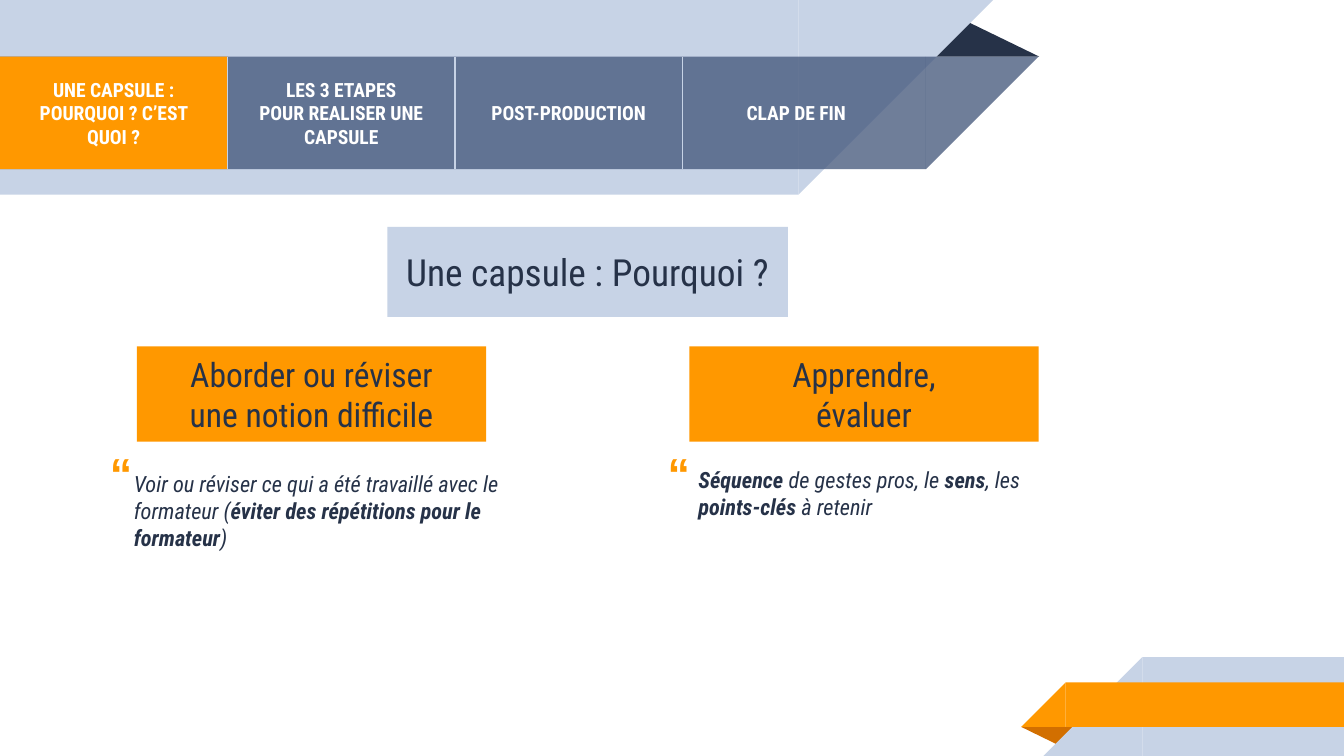
from lxml.etree import SubElement
from pptx import Presentation
from pptx.dml.color import RGBColor as Rgb
from pptx.enum.shapes import MSO_CONNECTOR as Conn, MSO_SHAPE as Kind
from pptx.enum.text import MSO_ANCHOR as Anchor, PP_ALIGN as Align
from pptx.oxml.ns import qn
from pptx.util import Cm, Pt

THEME = {
    "pale": "C7D3E6", "slate": "3F5378", "navy": "263248",
    "orange": "FF9800", "rust": "D26F00", "white": "FFFFFF",
    "font": "Roboto Condensed", "mark font": "Arial",
    "tab": 10.5, "title": 20, "card": 18, "body": 12, "mark": 24,
}

TABS = [
    "UNE CAPSULE :\vPOURQUOI ? C’EST QUOI ?",
    "LES 3 ETAPES\nPOUR REALISER UNE CAPSULE",
    "POST-PRODUCTION",
    "CLAP DE FIN",
]
TITLE = "Une capsule : Pourquoi ?"
# Stars enclose the bold parts of a body.
CARDS = [
    {"head": "Aborder ou réviser\nune notion difficile", "left": 2.59,
     "mark": 1.0, "box": (2.08, 7.95, 7.62, 3.4),
     "body": "Voir ou réviser ce qui a été travaillé avec le formateur "
             "(*éviter des répétitions pour le formateur*)"},
    {"head": "Apprendre,\névaluer", "left": 13.03,
     "mark": 11.89, "box": (12.75, 8.1, 7.57, 2.44),
     "body": "*Séquence* de gestes pros, le *sens*, les *points-clés *à retenir"},
]
CARDS[0]["mark"] = 1.35

BAR_TOP, BAR_TALL, TAB_WIDE = 1.07, 2.13, 4.3
RECT, WEDGE, FOLD = Kind.RECTANGLE, Kind.RIGHT_TRIANGLE, Kind.ISOSCELES_TRIANGLE

# kind, (left, top, width, height), colour, turn, opacity in %
DECOR = [
    (FOLD, (17.48, 0.36, 2.16, 0.71), "navy", 0, 100),
    (RECT, (0, 0, 15.09, 3.68), "pale", 0, 100),
    (WEDGE, (15.09, 0, 3.68, 3.68), "pale", 90, 100),
    (RECT, (0, BAR_TOP, 17.5, BAR_TALL), "slate", 0, 75),
    (WEDGE, (17.5, BAR_TOP, BAR_TALL, BAR_TALL), "slate", 90, 75),
    (FOLD, (19.3, 13.74, 1.09, 0.36), "rust", 180, 100),
    (RECT, (21.59, 12.42, 3.81, 1.87), "pale", 0, 100),
    (WEDGE, (19.72, 12.42, 1.87, 1.87), "pale", 270, 100),
    (RECT, (20.14, 12.9, 5.26, 0.84), "orange", 0, 100),
    (WEDGE, (19.3, 12.9, 0.84, 0.84), "orange", 270, 100),
]


def color(name):
    return Rgb.from_string(THEME[name])


def draw(slide, kind, box, fill, turn=0, alpha=100):
    shape = slide.shapes.add_shape(kind, *map(Cm, box))
    shape.shadow.inherit = False
    shape.line.fill.background()
    shape.fill.solid()
    shape.fill.fore_color.rgb = color(fill)
    shape.rotation = turn
    if kind == FOLD:
        shape.adjustments[0] = 0.324
    if alpha < 100:
        tint = shape.fill._xPr.find(".//" + qn("a:srgbClr"))
        SubElement(tint, qn("a:alpha"), val=str(alpha * 1000))
    return shape


def write(shape, text, size, ink, face="font", align=Align.CENTER,
          anchor=Anchor.MIDDLE, bold=None, italic=None, indent=0):
    """Fill the shape with text; starred parts turn bold."""
    frame = shape.text_frame
    frame.word_wrap = True
    frame.vertical_anchor = anchor
    frame.margin_left = Cm(0.25 + indent)
    frame.margin_right = frame.margin_top = frame.margin_bottom = Cm(0.25)
    if "*" in text:
        for i, part in enumerate(text.split("*")):
            if part:
                run = frame.paragraphs[0].add_run()
                run.text = part
                run.font.bold = i % 2 == 1
    else:
        frame.text = text
    for para in frame.paragraphs:
        para.alignment = align
        font = para.font
        font.name, font.size = THEME[face], Pt(THEME[size])
        font.bold, font.italic = bold, italic
        font.color.rgb = color(ink)


def add_text(slide, box, *args, **style):
    write(slide.shapes.add_textbox(*map(Cm, box)), *args, **style)


def add_rule(slide, x):
    x, top, end = map(Cm, (x, BAR_TOP, BAR_TOP + BAR_TALL))
    rule = slide.shapes.add_connector(Conn.STRAIGHT, x, top, x, end)
    rule.line.color.rgb = color("pale")
    rule.line.width = Pt(0.75)
    SubElement(rule._element.spPr, qn("a:effectLst"))


def add_tabs(slide):
    for i, label in enumerate(TABS):
        box = (i * TAB_WIDE, BAR_TOP, TAB_WIDE, BAR_TALL)
        if i == 0:
            write(draw(slide, RECT, box, "orange"), label, "tab", "white", bold=True)
        else:
            add_text(slide, box, label, "tab", "white", bold=True)
    for i in range(1, len(TABS)):
        add_rule(slide, i * TAB_WIDE)


def add_card(slide, card):
    head = draw(slide, RECT, (card["left"], 6.55, 6.6, 1.8), "orange")
    write(head, card["head"], "card", "navy")
    add_text(slide, card["box"], card["body"], "body", "navy",
             align=Align.LEFT, italic=True, indent=0.2)
    add_text(slide, (card["mark"], 8.18, 1.88, 1.8), "“", "mark", "orange",
             face="mark font", anchor=Anchor.TOP, bold=True)


def main():
    deck = Presentation()
    deck.slide_width, deck.slide_height = Cm(25.4), Cm(14.29)
    slide = deck.slides.add_slide(deck.slide_layouts[6])
    for item in DECOR:
        draw(slide, *item)
    add_tabs(slide)
    title = draw(slide, RECT, (7.32, 4.29, 7.57, 1.7), "pale")
    write(title, TITLE, "title", "navy")
    for card in CARDS:
        add_card(slide, card)
    deck.save("out.pptx")


if __name__ == "__main__":
    main()
